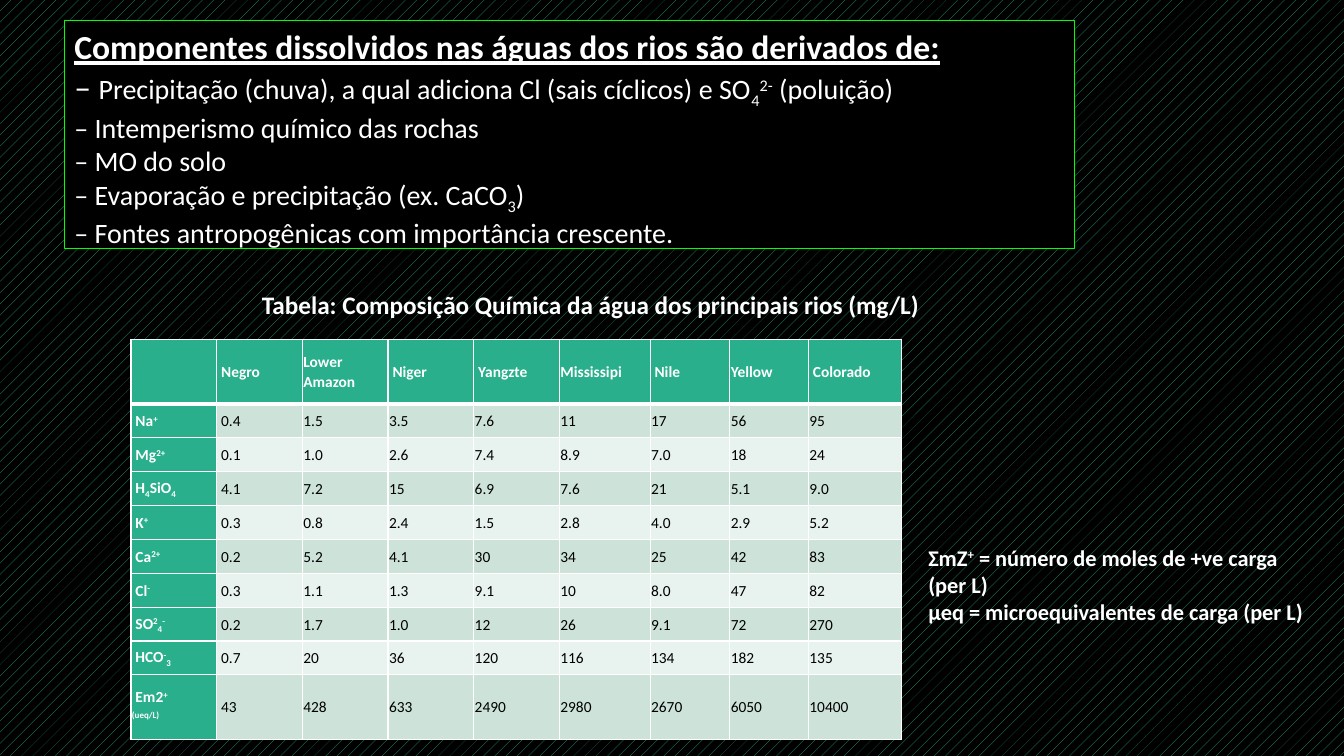
from copy import deepcopy
from dataclasses import dataclass

from lxml.etree import SubElement
from pptx import Presentation
from pptx.dml.color import RGBColor
from pptx.enum.dml import MSO_PATTERN
from pptx.enum.shapes import MSO_SHAPE
from pptx.enum.text import MSO_ANCHOR, MSO_AUTO_SIZE, PP_ALIGN
from pptx.oxml.ns import qn
from pptx.util import Pt


@dataclass(frozen=True)
class Theme:
    """Colours, font and type sizes of the slide."""
    black: RGBColor = RGBColor(0x00, 0x00, 0x00)
    white: RGBColor = RGBColor(0xFF, 0xFF, 0xFF)
    frame: RGBColor = RGBColor(0x00, 0xFF, 0x00)
    accent: RGBColor = RGBColor(0x29, 0xAF, 0x8C)
    bands: tuple = (RGBColor(0xCD, 0xE3, 0xDA), RGBColor(0xE8, 0xF2, 0xEE))
    font: str = "Calibri"
    heading: Pt = Pt(24)
    body: Pt = Pt(20)
    caption: Pt = Pt(18)
    note: Pt = Pt(16)
    cell: Pt = Pt(11)


THEME = Theme()
BASELINES = {"^": "30000", "_": "-25000"}

SOURCES = [
    "Intemperismo químico das rochas",
    "MO do solo",
    "Evaporação e precipitação (ex. CaCO|_3|)",
    "Fontes antropogênicas com importância crescente.",
]
RIVERS = ["Negro", "Lower Amazon", "Niger", "Yangzte", "Mississipi", "Nile", "Yellow", "Colorado"]
INDENTED_RIVERS = {"Negro", "Niger", "Yangzte", "Nile", "Colorado"}
COMPOSITION = {
    "Na|^+": "0.4 1.5 3.5 7.6 11 17 56 95",
    "Mg|^2+": "0.1 1.0 2.6 7.4 8.9 7.0 18 24",
    "H|_4|SiO|_4": "4.1 7.2 15 6.9 7.6 21 5.1 9.0",
    "K|^+": "0.3 0.8 2.4 1.5 2.8 4.0 2.9 5.2",
    "Ca|^2+": "0.2 5.2 4.1 30 34 25 42 83",
    "Cl|^-": "0.3 1.1 1.3 9.1 10 8.0 47 82",
    "SO|^2|_4|^-": "0.2 1.7 1.0 12 26 9.1 72 270",
    "HCO|^-|_3": "0.7 20 36 120 116 134 182 135",
    "Em2|^+||^(ueq/L)": "43 428 633 2490 2980 2670 6050 10400",
}
COLUMN_WIDTHS = [61.2] * 5 + [64.8, 56.9, 56.2, 66.2]
ROW_HEIGHTS = [46] + [24.2] * 8 + [46]


def apply_format(target, values):
    """Set each attribute named in values on the target."""
    for attribute, value in values.items():
        setattr(target, attribute, value)


def write(paragraph, marked_text, size, color=THEME.white, **extra):
    """Write text split at bars: ^ raises, _ lowers, an empty piece breaks the line."""
    for piece in marked_text.split("|"):
        if not piece:
            line_break = paragraph._p.add_br()
            line_break.append(deepcopy(paragraph.runs[-1]._r.rPr))
            continue
        run = paragraph.add_run()
        run.text = piece.lstrip("^_")
        apply_format(run.font, {"name": THEME.font, "size": size, **extra})
        run.font.color.rgb = color
        if piece[0] in BASELINES:
            run._r.get_or_add_rPr().set("baseline", BASELINES[piece[0]])


def prepare(frame):
    """Make a text frame wrap, start at the top and fit its text."""
    apply_format(frame, {"word_wrap": True, "vertical_anchor": MSO_ANCHOR.TOP,
                         "auto_size": MSO_AUTO_SIZE.SHAPE_TO_FIT_TEXT})
    return frame


def add_sources_panel(slide):
    """Add the framed list of sources of dissolved components."""
    panel = slide.shapes.add_shape(MSO_SHAPE.RECTANGLE, Pt(46), Pt(15), Pt(721.5), Pt(162.7))
    panel.shadow.inherit = False
    panel.fill.solid()
    panel.fill.fore_color.rgb = THEME.black
    panel.line.color.rgb = THEME.frame
    panel.line.width = Pt(0.75)
    frame = prepare(panel.text_frame)
    heading = frame.paragraphs[0]
    write(heading, "Componentes dissolvidos nas águas dos rios são derivados de:",
          THEME.heading, bold=True, underline=True)
    rain = frame.add_paragraph()
    write(rain, "– ", THEME.heading)
    write(rain, "Precipitação (chuva), a qual adiciona Cl (sais cíclicos) e SO|_4|^2-| (poluição)",
          THEME.body)
    for source in SOURCES:
        write(frame.add_paragraph(), f"– {source}", THEME.body)
    for paragraph in frame.paragraphs:
        paragraph.alignment = PP_ALIGN.LEFT


def add_bold_text(slide, bounds, lines, size):
    """Add a text box of bold white lines."""
    frame = prepare(slide.shapes.add_textbox(*map(Pt, bounds)).text_frame)
    for index, line in enumerate(lines):
        paragraph = frame.add_paragraph() if index else frame.paragraphs[0]
        write(paragraph, line, size, bold=True)


def draw_borders(cell, row):
    """Draw white cell borders, with a heavy rule under the header."""
    heavy = {(0, "lnB"), (1, "lnT")}
    for side in ("lnL", "lnR", "lnT", "lnB"):
        width = Pt(3 if (row, side) in heavy else 1)
        border = SubElement(cell._tc.get_or_add_tcPr(), qn(f"a:{side}"), w=str(width))
        paint = SubElement(border, qn("a:solidFill"))
        SubElement(paint, qn("a:srgbClr"), val=str(THEME.white))


def fill_cell(cell, row, column, text):
    """Write and colour one cell of the composition table."""
    is_label = row == 0 or column == 0
    draw_borders(cell, row)
    cell.fill.solid()
    cell.fill.fore_color.rgb = THEME.accent if is_label else THEME.bands[(row - 1) % 2]
    if not text:
        return
    margins = dict.fromkeys(("margin_left", "margin_right", "margin_top", "margin_bottom"), Pt(0.7))
    apply_format(cell, {"vertical_anchor": MSO_ANCHOR.MIDDLE, **margins})
    paragraph = cell.text_frame.paragraphs[0]
    apply_format(paragraph, {"line_spacing": 1.07, "space_after": Pt(8)})
    if text in INDENTED_RIVERS or (row and column < 2):
        paragraph._p.get_or_add_pPr().set("indent", str(Pt(2.5)))
    write(paragraph, text, THEME.cell, THEME.white if is_label else THEME.black, bold=is_label)


def add_composition_table(slide):
    """Add the table of river water composition."""
    rows = [["", *RIVERS]] + [[ion, *values.split()] for ion, values in COMPOSITION.items()]
    table = slide.shapes.add_table(len(rows), len(COLUMN_WIDTHS), Pt(93.6), Pt(242.6),
                                   Pt(sum(COLUMN_WIDTHS)), Pt(sum(ROW_HEIGHTS))).table
    table.first_col = True
    for column, width in zip(table.columns, COLUMN_WIDTHS):
        column.width = Pt(width)
    for row, height in zip(table.rows, ROW_HEIGHTS):
        row.height = Pt(height)
    for row, texts in enumerate(rows):
        for column, text in enumerate(texts):
            fill_cell(table.cell(row, column), row, column, text)


def paint_background(slide):
    """Give the slide its dotted green on black background."""
    fill = slide.background.fill
    fill.patterned()
    fill.pattern = MSO_PATTERN.PERCENT_10
    fill.fore_color.rgb = THEME.accent
    fill.back_color.rgb = THEME.black


def main():
    """Build and save the slide."""
    presentation = Presentation()
    apply_format(presentation, {"slide_width": Pt(960), "slide_height": Pt(540)})
    slide = presentation.slides.add_slide(presentation.slide_layouts[6])
    paint_background(slide)
    add_sources_panel(slide)
    add_bold_text(slide, (180, 203, 569.5, 29),
                  ["Tabela: Composição Química da água dos principais rios (mg/L)"], THEME.caption)
    add_composition_table(slide)
    add_bold_text(slide, (656, 385.2, 283, 65.5),
                  ["ΣmZ|^+| = número de moles de +ve carga (per L)",
                   "µeq = microequivalentes de carga (per L)"], THEME.note)
    presentation.save("out.pptx")


if __name__ == "__main__":
    main()
